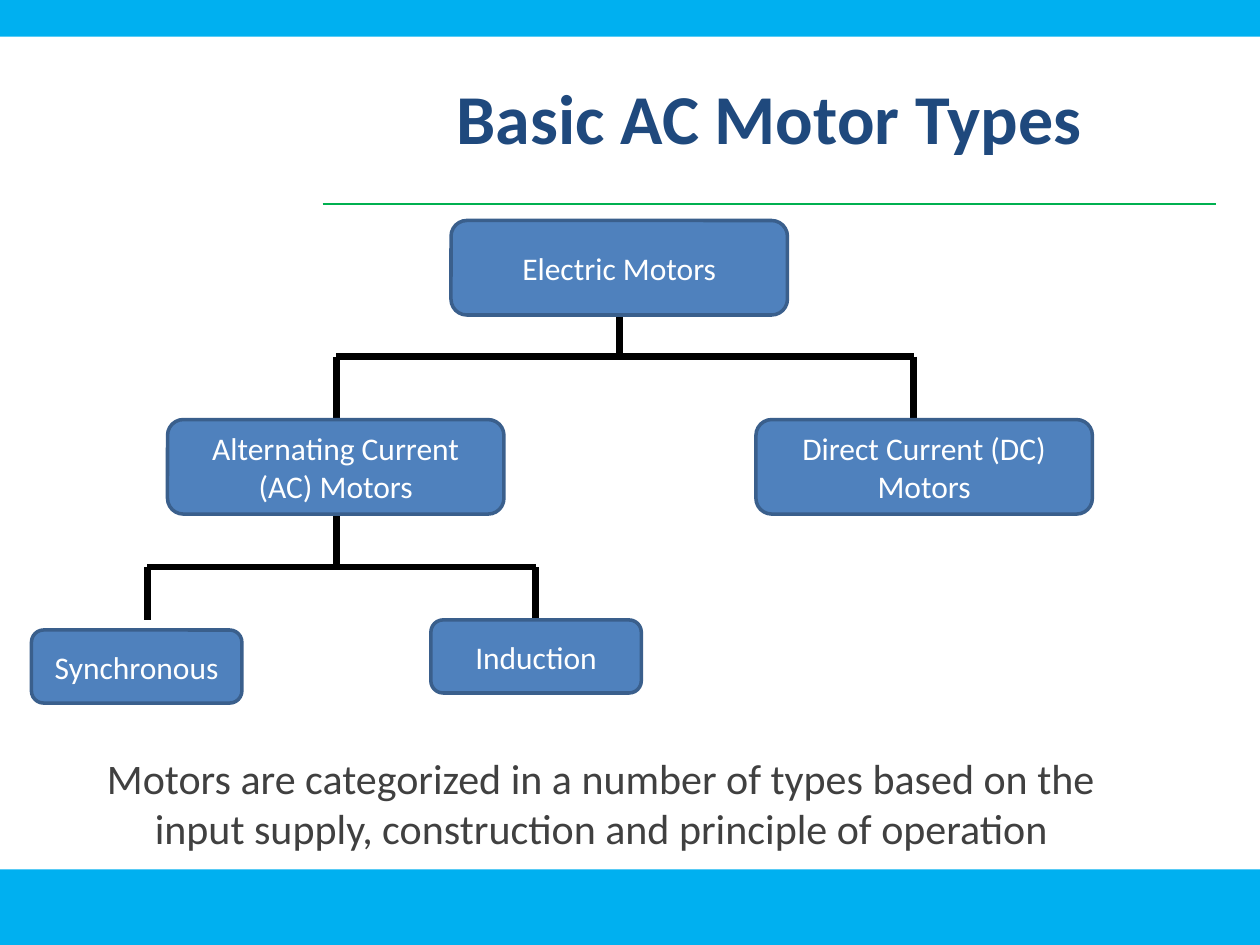
"""Build a slide with a tree of basic AC motor types."""
from lxml import etree
from pptx import Presentation
from pptx import util as u
from pptx.dml.color import RGBColor
from pptx.enum import shapes, text
from pptx.oxml.ns import qn


def color(value):
    return RGBColor.from_string(value)


def style_text(frame, size, value, align, bold=False):
    frame.word_wrap = True
    frame.auto_size = text.MSO_AUTO_SIZE.NONE
    para = frame.paragraphs[0]
    para.alignment = align
    for span in para.runs:
        span.font.name = "Calibri"
        span.font.size = u.Pt(size)
        span.font.bold = bold
        span.font.color.rgb = color(value)


deck = Presentation()
deck.slide_width, deck.slide_height = u.Inches(10), u.Inches(7.5)
page = deck.slides.add_slide(deck.slide_layouts[5])

for top, height in ((6.9, 0.6), (0, 0.29)):
    band = page.shapes.add_shape(
        shapes.MSO_SHAPE.RECTANGLE, 0, u.Inches(top), deck.slide_width, u.Inches(height))
    band.shadow.inherit = False
    band.fill.solid()
    band.fill.fore_color.rgb = color("00B0F0")
    band.line.fill.background()

title = page.shapes.title
title.left, title.top = u.Inches(2.56), u.Inches(0.3)
title.width, title.height = u.Inches(7.09), u.Inches(1.25)
title.text_frame.text = "Basic AC Motor Types"
title.text_frame.vertical_anchor = text.MSO_ANCHOR.MIDDLE
style_text(title.text_frame, 40, "1F497D", text.PP_ALIGN.CENTER, True)

summary = page.shapes.add_textbox(
    u.Inches(0.75), u.Inches(5.92), u.Inches(8.82), u.Inches(0.89))
summary.text_frame.text = (
    "Motors are categorized in a number of types based on the "
    "input supply, construction and principle of operation")
properties = summary.text_frame.paragraphs[0]._p.get_or_add_pPr()
properties.set("marL", str(u.Inches(0.38)))
properties.set("indent", str(u.Inches(-0.38)))
style_text(summary.text_frame, 24, "404040", text.PP_ALIGN.LEFT)

rules = [(2.56, 1.62, 9.65, 1.62, "00B050", 0.75)]
branches = [
    (4.92, 2.5, 2.83, 3.33, (2.67, 7.25)),
    (2.67, 4.08, 4.5, 4.92, (1.17, 4.25)),
]
for stem, top, middle, bottom, ends in branches:
    segments = [(stem, top, stem, middle), (ends[0], middle, ends[1], middle)]
    segments += [(end, middle, end, bottom) for end in ends]
    rules += [(*segment, "000000", 4) for segment in segments]

for x1, y1, x2, y2, value, width in rules:
    line = page.shapes.add_connector(
        shapes.MSO_CONNECTOR.STRAIGHT,
        u.Inches(x1), u.Inches(y1), u.Inches(x2), u.Inches(y2))
    line.line.color.rgb = color(value)
    line.line.width = u.Pt(width)
    etree.SubElement(line._element.spPr, qn("a:effectLst"))

motors = [
    ("Electric Motors", 3.58, 1.75, 2.67, 0.75),
    ("Alternating Current (AC) Motors", 1.33, 3.33, 2.67, 0.75),
    ("Direct Current (DC) Motors", 6, 3.33, 2.67, 0.75),
    ("Synchronous", 0.25, 5, 1.67, 0.58),
    ("Induction", 3.42, 4.92, 1.67, 0.58),
]
for label, left, top, width, height in motors:
    box = page.shapes.add_shape(
        shapes.MSO_SHAPE.ROUNDED_RECTANGLE,
        u.Inches(left), u.Inches(top), u.Inches(width), u.Inches(height))
    box.shadow.inherit = False
    box.fill.solid()
    box.fill.fore_color.rgb = color("4F81BD")
    box.line.color.rgb = color("3A5F8C")
    box.line.width = u.Pt(2)
    box.text_frame.text = label
    box.text_frame.vertical_anchor = text.MSO_ANCHOR.MIDDLE
    style_text(box.text_frame, 18, "FFFFFF", text.PP_ALIGN.CENTER)

deck.save("out.pptx")
